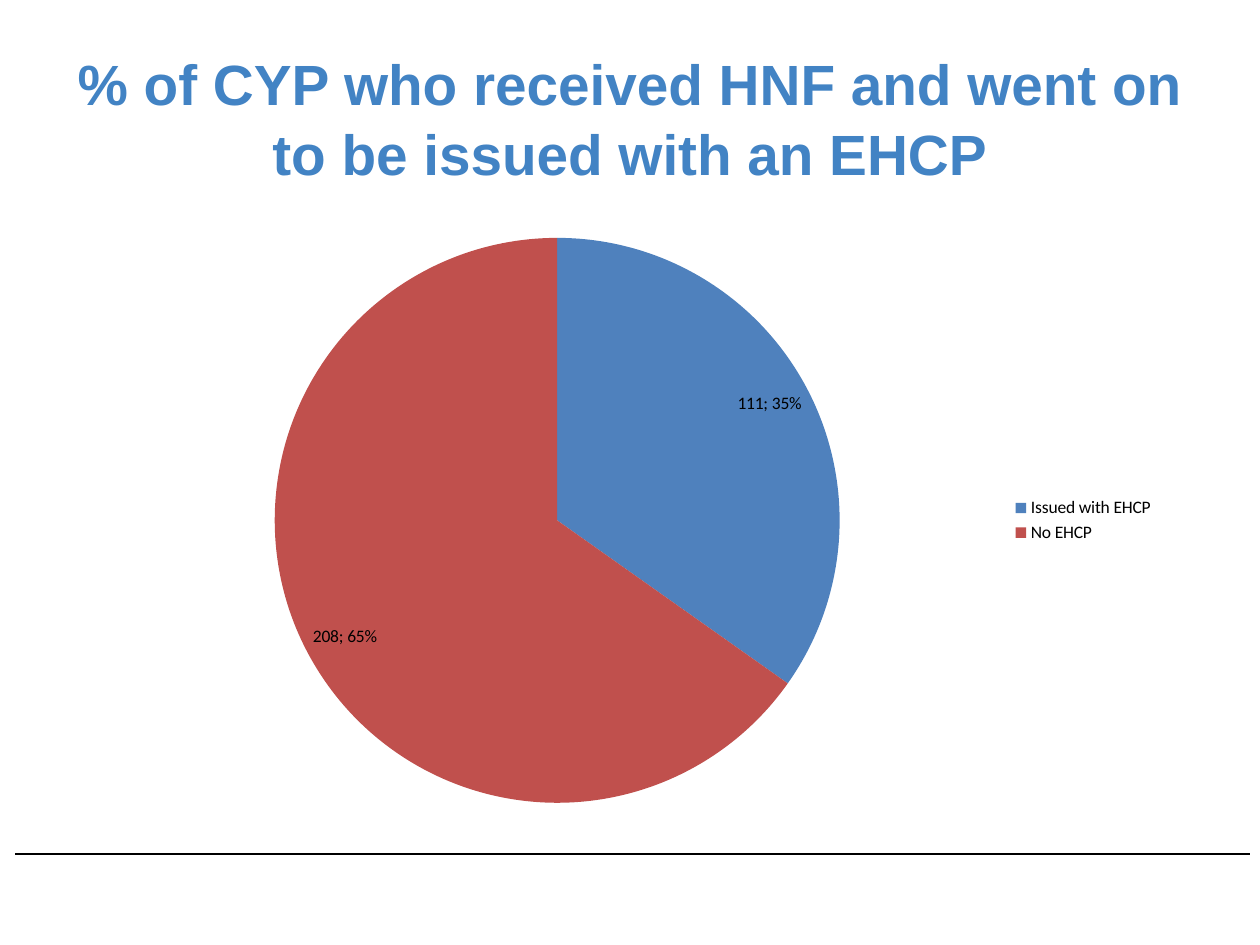
from lxml.etree import SubElement
from pptx import Presentation
from pptx.chart.data import CategoryChartData
from pptx.dml.color import RGBColor
from pptx.enum.chart import XL_CHART_TYPE, XL_LABEL_POSITION, XL_LEGEND_POSITION
from pptx.enum.shapes import MSO_CONNECTOR
from pptx.enum.text import MSO_ANCHOR, PP_ALIGN
from pptx.oxml.ns import qn
from pptx.util import Inches, Pt

TITLE = "% of CYP who received HNF and went on to be issued with an EHCP"
OUTCOMES = [("Issued with EHCP", 111, "4F81BD"), ("No EHCP", 208, "C0504D")]
THEME = {
    "title": {"font": "Arial", "size": 32.4, "color": "4283C4"},
    "chart": {"font": "Calibri", "size": 10, "color": "000000"},
    "rule": "000000",
}


def style_font(font, style):
    font.name = style["font"]
    font.size = Pt(style["size"])
    font.color.rgb = RGBColor.from_string(style["color"])


def add_rule(s):
    line = s.shapes.add_connector(
        MSO_CONNECTOR.STRAIGHT, Inches(0.12), Inches(6.78), Inches(9.92), Inches(6.78))
    line.line.color.rgb = RGBColor.from_string(THEME["rule"])
    line.line.width = Pt(1)
    SubElement(line._element.spPr, qn("a:effectLst"))


def add_title(s):
    tf = s.shapes.add_textbox(Inches(0.5), Inches(0.3), Inches(9), Inches(1.25)).text_frame
    tf.word_wrap = True
    tf.vertical_anchor = MSO_ANCHOR.MIDDLE
    p = tf.paragraphs[0]
    p.alignment = PP_ALIGN.CENTER
    p.line_spacing = 1.04
    r = p.add_run()
    r.text = TITLE
    r.font.bold = True
    style_font(r.font, THEME["title"])


def add_pie(s):
    names, counts, colors = zip(*OUTCOMES)
    data = CategoryChartData()
    data.categories = names
    data.add_series("Series 1", counts)
    chart = s.shapes.add_chart(
        XL_CHART_TYPE.PIE, Inches(0.83), Inches(1.75), Inches(8.43), Inches(4.76), data).chart
    style_font(chart.font, THEME["chart"])
    chart.has_title = False
    chart.has_legend = True
    chart.legend.position = XL_LEGEND_POSITION.RIGHT
    chart.legend.include_in_layout = False

    plot = chart.plots[0]
    plot.vary_by_categories = True
    for i, color in enumerate(colors):
        fill = plot.series[0].points[i].format.fill
        fill.solid()
        fill.fore_color.rgb = RGBColor.from_string(color)

    labels = plot.series[0].data_labels
    labels.show_value = True
    labels.show_percentage = True
    labels.position = XL_LABEL_POSITION.INSIDE_END
    separator = SubElement(labels._element, qn("c:separator"))
    separator.text = "; "
    labels._element.find(qn("c:showBubbleSize")).addnext(separator)


def main():
    prs = Presentation()
    prs.slide_width, prs.slide_height = Inches(10), Inches(7.5)
    s = prs.slides.add_slide(prs.slide_layouts[6])
    add_rule(s)
    add_title(s)
    add_pie(s)
    prs.save("out.pptx")


if __name__ == "__main__":
    main()
